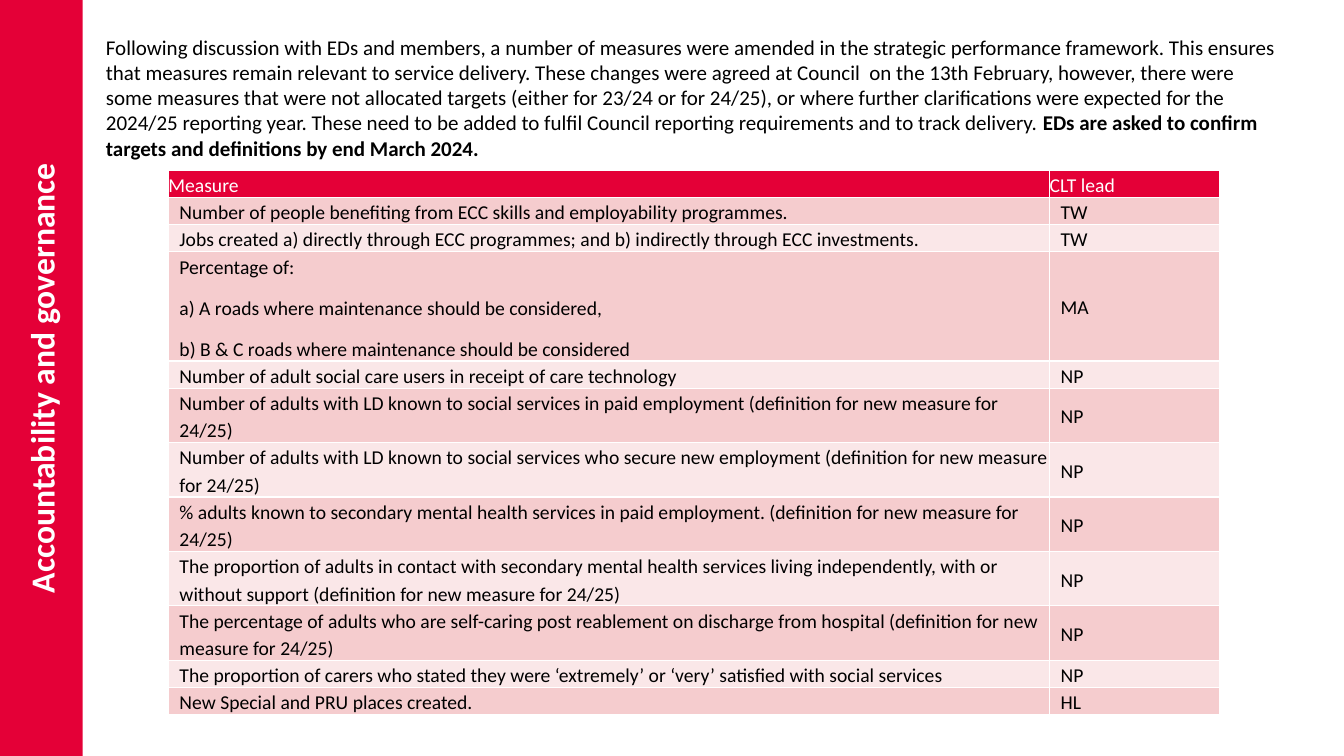
from lxml.etree import SubElement as Sub
from pptx import Presentation as Deck
from pptx.dml.color import RGBColor as Color
from pptx.enum.shapes import MSO_SHAPE as Shape
from pptx.enum.text import MSO_ANCHOR as Anchor, PP_ALIGN as Align
from pptx.oxml.ns import qn
from pptx.util import Inches, Pt

WIDE, HIGH = Inches(13.33), Inches(7.5)
RED, WHITE, BLACK = "E40037", "FFFFFF", "000000"
BANDS = ["F5CCCE", "FAE7E8"]
FONT = "Calibri"
INDENT = Inches(0.11)

INTRO = [
    ("Following discussion with EDs and members, a number of measures were amended in the "
     "strategic performance framework. This ensures that measures remain relevant to service "
     "delivery. These changes were agreed at Council  on the 13th February, however, there "
     "were some measures that were not allocated targets (either for 23/24 or for 24/25), "
     "or where further clarifications were expected for the 2024/25 reporting year. These "
     "need to be added to fulfil Council reporting requirements and to track delivery. ", False),
    ("EDs are asked to confirm targets and definitions by end March 2024.", True),
]

HEADS = ("Measure", "CLT lead")
ROWS = [
    ("Number of people benefiting from ECC skills and employability programmes.", "TW", 1),
    ("Jobs created a) directly through ECC programmes; and b) indirectly through ECC "
     "investments.", "TW", 1),
    ("Percentage of:\na) A roads where maintenance should be considered,\n"
     "b) B & C roads where maintenance should be considered", "MA", 4),
    ("Number of adult social care users in receipt of care technology", "NP", 1),
    ("Number of adults with LD known to social services in paid employment (definition for "
     "new measure for 24/25)", "NP", 2),
    ("Number of adults with LD known to social services who secure new employment "
     "(definition for new measure for 24/25)", "NP", 2),
    ("% adults known to secondary mental health services in paid employment. (definition for "
     "new measure for 24/25)", "NP", 2),
    ("The proportion of adults in contact with secondary mental health services living "
     "independently, with or without support (definition for new measure for 24/25)", "NP", 2),
    ("The percentage of adults who are self-caring post reablement on discharge from hospital "
     "(definition for new measure for 24/25)", "NP", 2),
    ("The proportion of carers who stated they were ‘extremely’ or ‘very’ satisfied with "
     "social services", "NP", 1),
    ("New Special and PRU places created.", "HL", 1),
]


def across(share):
    return round(WIDE * share / 100)


def down(share):
    return round(HIGH * share / 100)


def paint(fill, tint):
    fill.solid()
    fill.fore_color.rgb = Color.from_string(tint)


def clear(box):
    box.margin_left = box.margin_right = box.margin_top = box.margin_bottom = 0


def add_run(para, text, size, tint, bold=False):
    run = para.add_run()
    run.text = text
    run.font.name = FONT
    run.font.size = Pt(size)
    run.font.bold = bold
    run.font.color.rgb = Color.from_string(tint)


def add_intro(slide):
    box = slide.shapes.add_textbox(across(7.88), down(4.53), across(87.62), down(22.13))
    frame = box.text_frame
    frame.word_wrap = True
    clear(frame)
    para = frame.paragraphs[0]
    for text, bold in INTRO:
        add_run(para, text, 15, BLACK, bold)


def add_bar(slide, title):
    thick = across(6.15)
    bar = slide.shapes.add_shape(
        Shape.RECTANGLE, (thick - HIGH) // 2, (HIGH - thick) // 2, HIGH, thick)
    bar.rotation = 270
    bar.shadow.inherit = False
    paint(bar.fill, RED)
    bar.line.fill.background()
    frame = bar.text_frame
    clear(frame)
    frame.vertical_anchor = Anchor.MIDDLE
    para = frame.paragraphs[0]
    para.alignment = Align.CENTER
    add_run(para, title, 24, WHITE, True)


def edge(cell):
    props = cell._tc.get_or_add_tcPr()
    for place, side in enumerate(("lnL", "lnR", "lnT", "lnB")):
        line = Sub(props, qn(f"a:{side}"), w=str(Pt(1)))
        props.insert(place, line)
        Sub(Sub(line, qn("a:solidFill")), qn("a:srgbClr"), val=WHITE)


def fill_cell(cell, text, fill, tint, indent=0):
    clear(cell)
    cell.vertical_anchor = Anchor.MIDDLE
    paint(cell.fill, fill)
    edge(cell)
    frame = cell.text_frame
    for place, part in enumerate(text.split("\n")):
        para = frame.add_paragraph() if place else frame.paragraphs[0]
        para.line_spacing = 1.15
        para.space_after = Pt(10)
        if indent:
            props = para._p.get_or_add_pPr()
            props.set("marL", str(indent))
            props.set("indent", "0")
        add_run(para, part, 14, tint)


def add_grid(slide):
    spans = across(65.57), across(12.68)
    step = down(3.6)
    total = 1 + sum(lines for _, _, lines in ROWS)
    grid = slide.shapes.add_table(
        len(ROWS) + 1, len(spans), across(12.53), down(22.53), sum(spans), step * total).table
    for col, span in zip(grid.columns, spans):
        col.width = span
    grid.rows[0].height = step
    for col, head in enumerate(HEADS):
        fill_cell(grid.cell(0, col), head, RED, WHITE)
    for row, (name, lead, lines) in enumerate(ROWS, 1):
        grid.rows[row].height = step * lines
        for col, text in enumerate((name, lead)):
            fill_cell(grid.cell(row, col), text, BANDS[(row - 1) % 2], BLACK, INDENT)


def main():
    deck = Deck()
    deck.slide_width, deck.slide_height = WIDE, HIGH
    slide = deck.slides.add_slide(deck.slide_layouts[6])
    add_intro(slide)
    add_grid(slide)
    add_bar(slide, "Accountability and governance")
    deck.save("out.pptx")


if __name__ == "__main__":
    main()
